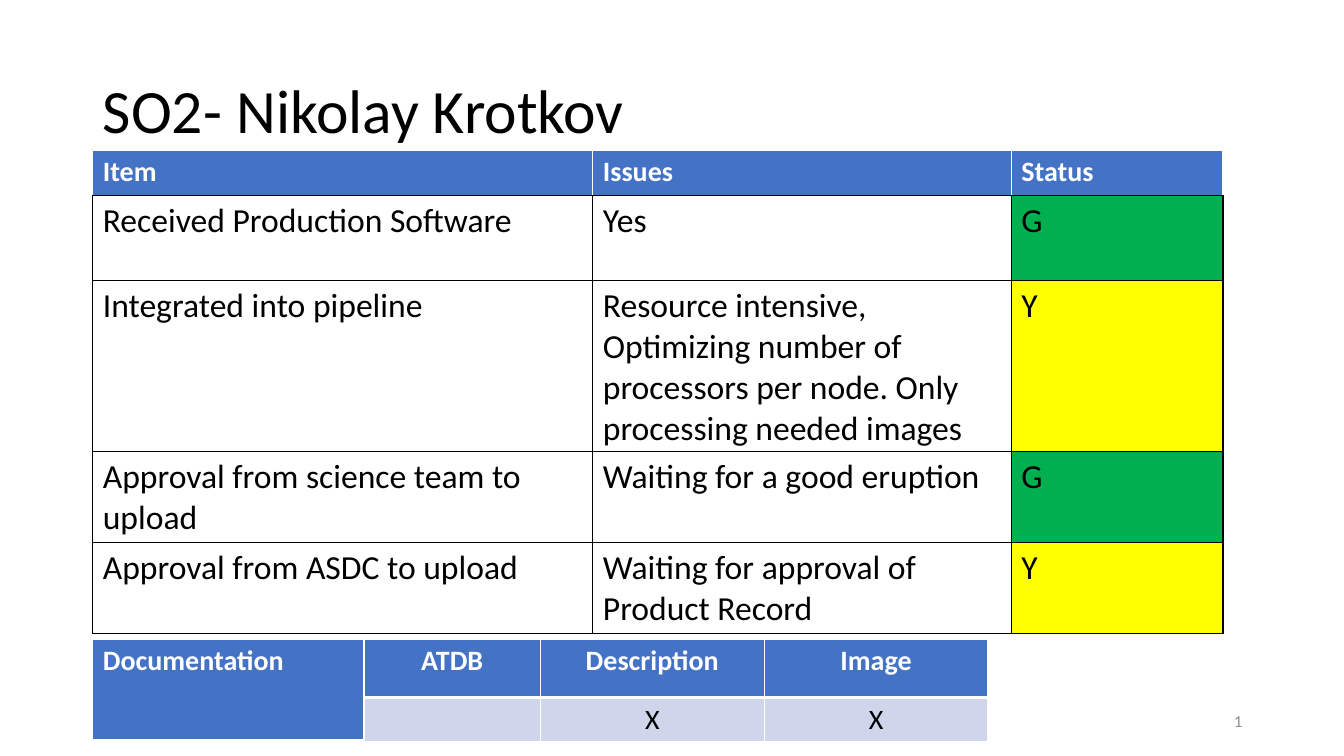
from lxml import etree
from pptx import Presentation
from pptx.dml.color import RGBColor
from pptx.enum.text import MSO_ANCHOR, PP_ALIGN
from pptx.oxml import parse_xml
from pptx.oxml.ns import nsdecls, qn
from pptx.util import Inches, Pt

WHITE, BLACK, BLUE, PALE, GRAY = "FFFFFF", "000000", "4472C4", "CFD5EA", "8C8C8C"
STATUS_FILL = {"G": "00B050", "Y": "FFFF00"}


def style_font(font, size, color, bold=False):
    font.name = "Calibri"
    font.size = Pt(size)
    font.bold = bold
    font.color.rgb = RGBColor.from_string(color)


def style_cell(cell, text, size, color, fill, edges, bold=False, align=PP_ALIGN.LEFT):
    """Fill one cell; edges lists (colour, points) for left, right, top and bottom."""
    cell.text = text
    p = cell.text_frame.paragraphs[0]
    p.alignment = align
    for r in p.runs:
        style_font(r.font, size, color, bold)
    tcPr = cell._tc.get_or_add_tcPr()
    for side, (edge_color, width) in zip("LRTB", edges):
        tcPr.append(parse_xml(
            f'<a:ln{side} {nsdecls("a")} w="{Pt(width)}"><a:solidFill>'
            f'<a:srgbClr val="{edge_color}"/></a:solidFill></a:ln{side}>'))
    if fill:
        cell.fill.solid()
        cell.fill.fore_color.rgb = RGBColor.from_string(fill)
    else:
        cell.fill.background()


prs = Presentation()
prs.slide_width, prs.slide_height = Inches(13.33), Inches(7.5)
s = prs.slides.add_slide(prs.slide_layouts[5])

# Title
title = s.shapes.title
title.left, title.top = Inches(0.92), Inches(0.4)
title.width, title.height = Inches(11.5), Inches(1.45)
tf = title.text_frame
tf.text = "SO2\t- Nikolay Krotkov"
tf.vertical_anchor = MSO_ANCHOR.MIDDLE
p = tf.paragraphs[0]
p.alignment = PP_ALIGN.LEFT
p.line_spacing = 0.9
style_font(p.runs[0].font, 44, BLACK)

# Slide number
number = s.shapes.add_textbox(Inches(9.42), Inches(6.95), Inches(3), Inches(0.4))
tf = number.text_frame
tf.word_wrap = True
tf.vertical_anchor = MSO_ANCHOR.MIDDLE
p = tf.paragraphs[0]
p.alignment = PP_ALIGN.RIGHT
r = p.add_run()
r.text = "7"
style_font(r.font, 12, GRAY)
field = etree.SubElement(p._p, qn("a:fld"), type="slidenum",
                         id="{B6F15528-21DE-4FAA-801E-634DDDAF4B2B}")
field.extend(list(r._r))
p._p.remove(r._r)

# Status table
status_rows = [
    ("Item", "Issues", "Status"),
    ("Received Production Software", "Yes", "G"),
    ("Integrated into pipeline",
     "Resource intensive, Optimizing number of processors per node. "
     "Only processing needed images", "Y"),
    ("Approval from science team to upload", "Waiting for a good eruption", "G"),
    ("Approval from ASDC to upload", "Waiting for approval of Product Record", "Y"),
]
status = s.shapes.add_table(5, 3, Inches(0.92), Inches(1.49),
                            Inches(11.21), Inches(3.89)).table
for column, width in zip(status.columns, (4.96, 4.15, 2.1)):
    column.width = Inches(width)
for row, height in zip(status.rows, (0.45, 0.84, 1.39, 0.6, 0.61)):
    row.height = Inches(height)
for i, texts in enumerate(status_rows):
    for j, text in enumerate(texts):
        cell = status.cell(i, j)
        if i == 0:
            style_cell(cell, text, 20, WHITE, BLUE,
                       [(WHITE, 1)] * 3 + [(BLACK, 1)], bold=True)
        else:
            style_cell(cell, text, 24, BLACK, STATUS_FILL.get(text), [(BLACK, 1)] * 4)

# Documentation table
doc_rows = [("Documentation", "ATDB", "Description", "Image"), ("", "", "X", "X")]
docs = s.shapes.add_table(2, 4, Inches(0.92), Inches(6.34),
                          Inches(8.88), Inches(0.99)).table
for column, width in zip(docs.columns, (2.69, 1.75, 2.22, 2.22)):
    column.width = Inches(width)
for row, height in zip(docs.rows, (0.58, 0.41)):
    row.height = Inches(height)
for i, texts in enumerate(doc_rows):
    for j, text in enumerate(texts):
        header = i == 0 or j == 0
        align = PP_ALIGN.CENTER if j else PP_ALIGN.LEFT
        style_cell(docs.cell(i, j), text, 20, WHITE if header else BLACK,
                   BLUE if header else PALE,
                   [(WHITE, 1)] * 3 + [(WHITE, 3 if header else 1)], header, align)
docs.cell(0, 0).merge(docs.cell(1, 0))

prs.save("out.pptx")
